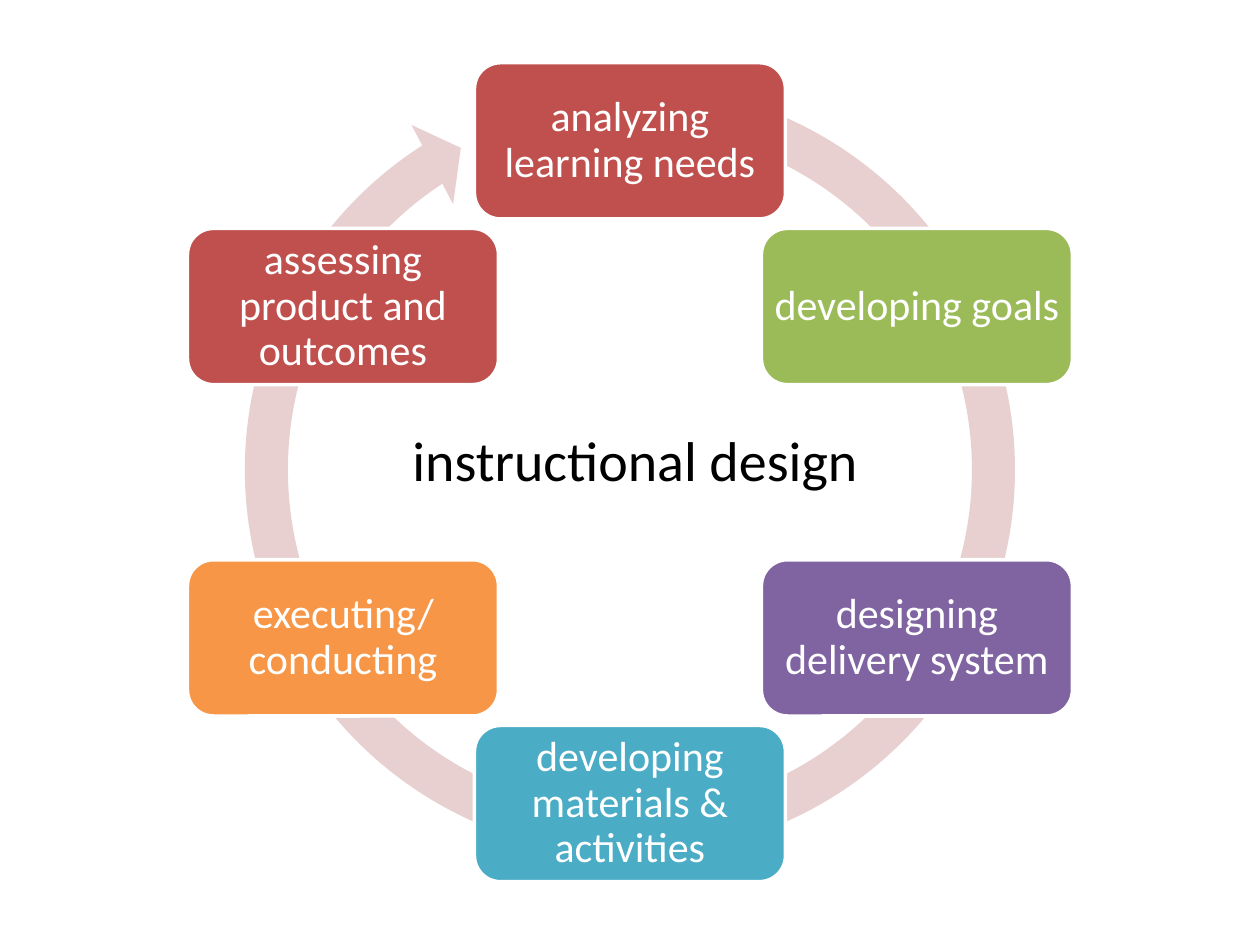
"""Build a slide showing the six-step instructional design cycle."""
import math

import pptx
import pptx.dml.color
import pptx.enum.shapes
import pptx.enum.text
import pptx.util

Cm = pptx.util.Cm
Pt = pptx.util.Pt
Shape = pptx.enum.shapes.MSO_SHAPE


def paint(target, color):
    if hasattr(target, "solid"):
        target.solid()
        target = target.fore_color
    target.rgb = pptx.dml.color.RGBColor.from_string(color)


def write(box, text, size, color, spacing, frame_format):
    frame = box.text_frame
    for name, value in frame_format.items():
        setattr(frame, name, value)
    para = frame.paragraphs[0]
    para.alignment = pptx.enum.text.PP_ALIGN.CENTER
    para.line_spacing = spacing
    span = para.add_run()
    span.text = text
    for name, value in {"name": "Calibri", "size": Pt(size)}.items():
        setattr(span.font, name, value)
    paint(span.font.color, color)


deck = pptx.Presentation()
deck.slide_width = Cm(25.4)
deck.slide_height = Cm(19.05)
page = deck.slides.add_slide(deck.slide_layouts[6])

ring = page.shapes.add_shape(
    Shape.CIRCULAR_ARROW, Cm(4.47), Cm(1.24), Cm(16.46), Cm(16.46))
for index, value in enumerate([0.05274, 3.1263, 142.242, 171.293, 0.05477]):
    ring.adjustments[index] = value
ring.shadow.inherit = False
paint(ring.fill, "E8D0D0")
ring.line.fill.background()

steps = [
    ("analyzing learning needs", "C0504D"),
    ("developing goals", "9BBB59"),
    ("designing delivery system", "8064A2"),
    ("developing materials & activities", "4BACC6"),
    ("executing/conducting", "F79646"),
    ("assessing product and outcomes", "C0504D"),
]
center_x, center_y, radius = 12.7, 9.52, 6.68
width, height = 6.27, 3.15
step_format = {
    "word_wrap": True,
    "vertical_anchor": pptx.enum.text.MSO_ANCHOR.MIDDLE,
    "margin_left": Cm(0.1),
    "margin_right": Cm(0.1),
    "margin_top": Cm(0.1),
    "margin_bottom": Cm(0.1),
}
for index, (text, color) in enumerate(steps):
    angle = math.tau * index / len(steps)
    left = center_x + radius * math.sin(angle) - width / 2
    top = center_y - radius * math.cos(angle) - height / 2
    box = page.shapes.add_shape(
        Shape.ROUNDED_RECTANGLE, Cm(left), Cm(top), Cm(width), Cm(height))
    box.shadow.inherit = False
    paint(box.fill, color)
    paint(box.line.fill, "FFFFFF")
    box.line.width = Pt(2)
    write(box, text, 24, "FFFFFF", 0.9, step_format)

title = page.shapes.add_textbox(Cm(7.19), Cm(8.46), Cm(11.23), Cm(1.63))
title_format = {
    "word_wrap": True,
    "auto_size": pptx.enum.text.MSO_AUTO_SIZE.SHAPE_TO_FIT_TEXT,
}
write(title, "instructional design", 32, "000000", 1.0, title_format)

deck.save("out.pptx")
